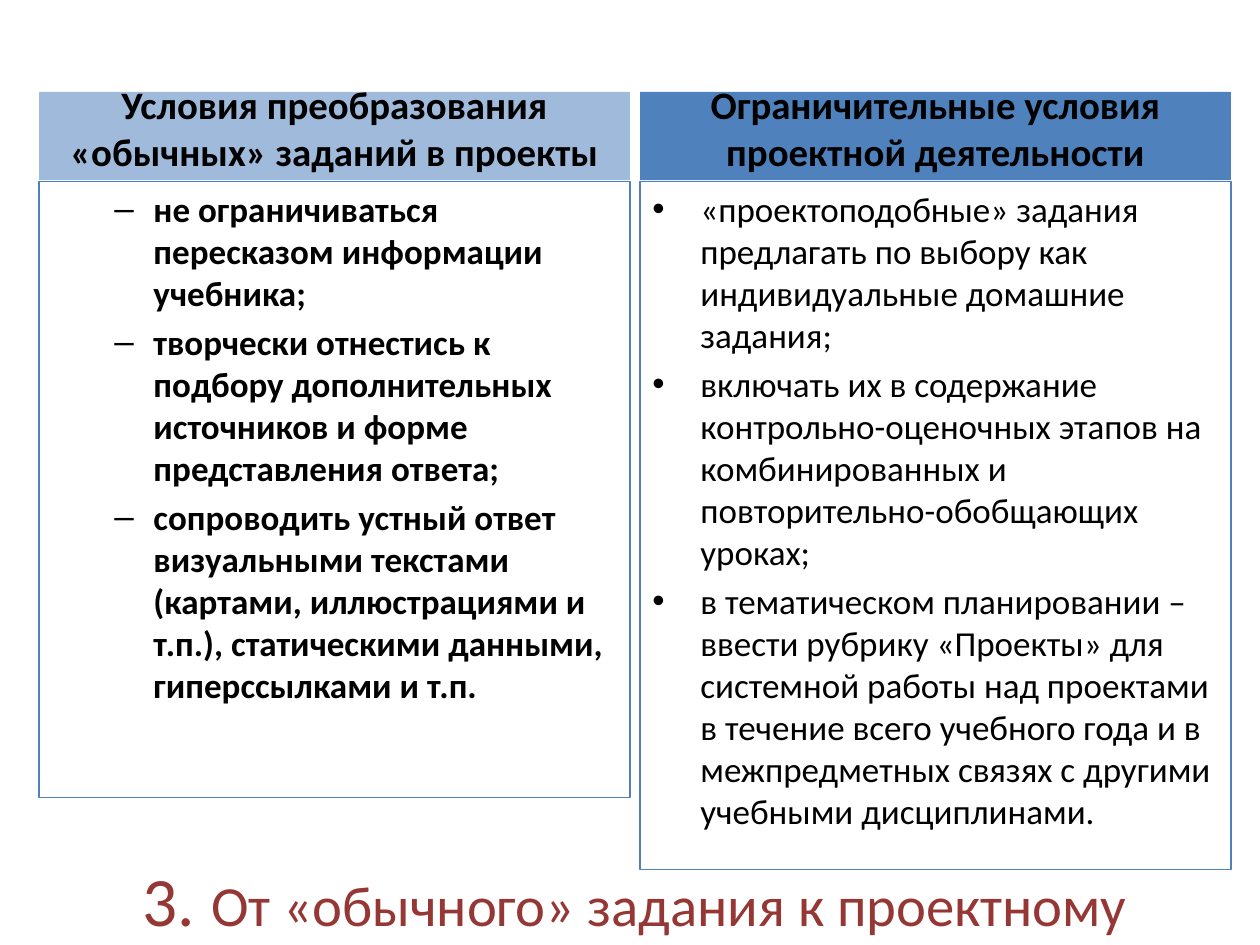
from lxml import etree
from pptx import Presentation
from pptx.dml.color import RGBColor
from pptx.enum import shapes, text
from pptx.oxml.ns import qn
from pptx.util import Inches, Pt

BLUE = RGBColor(0x4F, 0x81, 0xBD)
BLACK = RGBColor(0, 0, 0)
RED = RGBColor(0x95, 0x37, 0x35)
FONT = "Calibri"

TITLE = [("3. ", 39.6), ("От «обычного» задания к проектному", 32.4)]
COLS = [
    dict(head="Условия преобразования «обычных» заданий в проекты",
         alpha=54, tall=4.89, mark="–", left=0.81, hang=0.31, bold=True,
         items=["не ограничиваться пересказом информации учебника;",
                "творчески отнестись к подбору дополнительных источников и "
                "форме представления ответа;",
                "сопроводить устный ответ визуальными текстами (картами, "
                "иллюстрациями и т.п.), статическими данными, "
                "гиперссылками и т.п."]),
    dict(head="Ограничительные условия проектной деятельности",
         alpha=100, tall=5.46, mark="•", left=0.38, hang=0.38, bold=False,
         items=["«проектоподобные» задания предлагать по выбору как "
                "индивидуальные домашние задания;",
                "включать их в содержание контрольно-оценочных этапов на "
                "комбинированных и повторительно-обобщающих уроках;",
                "в тематическом планировании – ввести рубрику «Проекты» для "
                "системной работы над проектами в течение всего учебного "
                "года и в межпредметных связях с другими учебными "
                "дисциплинами."]),
]
LEFT, STEP, WIDE = 0.31, 4.77, 4.69
HEAD_TOP, HEAD_TALL, BODY_TOP = 0.73, 0.7, 1.44


def add_box(slide, x, y, w, h, anchor):
    box = slide.shapes.add_shape(shapes.MSO_SHAPE.RECTANGLE, Inches(x),
                                 Inches(y), Inches(w), Inches(h))
    box.shadow.inherit = False
    box.text_frame.word_wrap = True
    box.text_frame.vertical_anchor = anchor
    return box


def style(par, size, bold, align):
    par.alignment = align
    par.font.name, par.font.size = FONT, Pt(size)
    par.font.bold, par.font.color.rgb = bold, BLACK


def set_mark(par, mark, left, hang):
    props = par._p.get_or_add_pPr()
    props.set("marL", str(Inches(left)))
    props.set("indent", str(-Inches(hang)))
    font = etree.Element(qn("a:buFont"), typeface="Arial")
    char = etree.Element(qn("a:buChar"), char=mark)
    # Bullets come before the default run properties
    spot = props.find(qn("a:defRPr"))
    for node in (font, char):
        spot.addprevious(node)


prs = Presentation()
prs.slide_width, prs.slide_height = Inches(10), Inches(7.5)
slide = prs.slides.add_slide(prs.slide_layouts[6])

# Title at the foot
box = slide.shapes.add_textbox(Inches(0.33), Inches(6.9),
                               Inches(9.42), Inches(0.47))
frame = box.text_frame
frame.word_wrap = True
frame.vertical_anchor = text.MSO_ANCHOR.MIDDLE
par = frame.paragraphs[0]
par.alignment = text.PP_ALIGN.CENTER
par.font.name, par.font.color.rgb = FONT, RED
for words, size in TITLE:
    run = par.add_run()
    run.text, run.font.size = words, Pt(size)

for i, col in enumerate(COLS):
    x = LEFT + i * STEP

    # Column heading
    head = add_box(slide, x, HEAD_TOP, WIDE, HEAD_TALL,
                   text.MSO_ANCHOR.BOTTOM)
    head.fill.solid()
    head.fill.fore_color.rgb = BLUE
    head.line.fill.background()
    if col["alpha"] < 100:
        tint = head._element.spPr.find(".//" + qn("a:srgbClr"))
        etree.SubElement(tint, qn("a:alpha"), val=str(col["alpha"] * 1000))
    par = head.text_frame.paragraphs[0]
    par.text = col["head"]
    style(par, 22.2, True, text.PP_ALIGN.CENTER)

    # Bulleted list
    body = add_box(slide, x, BODY_TOP, WIDE, col["tall"],
                   text.MSO_ANCHOR.TOP)
    body.fill.background()
    body.line.color.rgb, body.line.width = BLUE, Pt(0.75)
    frame = body.text_frame
    for j, item in enumerate(col["items"]):
        par = frame.add_paragraph() if j else frame.paragraphs[0]
        par.text = item
        par.space_before = Pt(4)
        style(par, 20, col["bold"], text.PP_ALIGN.LEFT)
        set_mark(par, col["mark"], col["left"], col["hang"])

prs.save("out.pptx")
